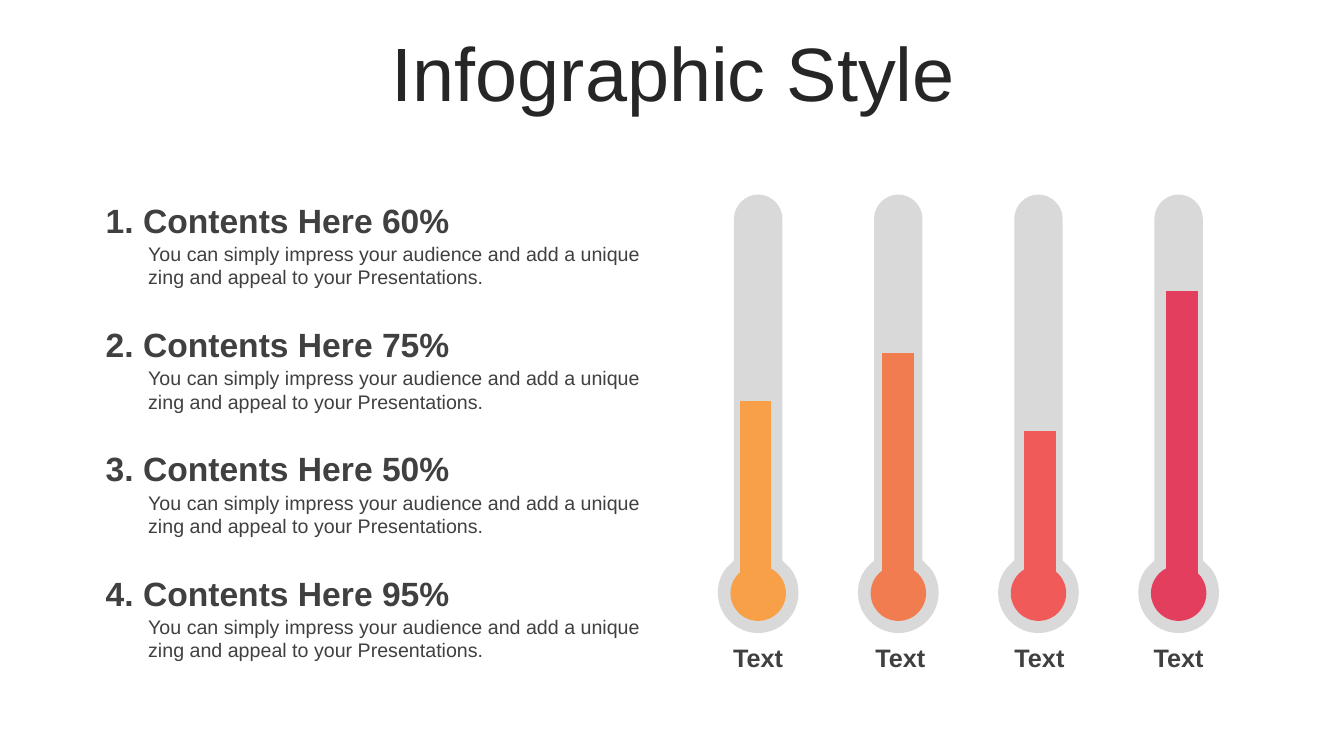
"""Build a slide with four thermometers beside four numbered statements."""
from lxml import etree
from pptx import Presentation
from pptx.chart.data import CategoryChartData
from pptx.dml.color import RGBColor
from pptx.enum.chart import XL_CHART_TYPE
from pptx.enum.shapes import MSO_SHAPE
from pptx.enum.text import MSO_ANCHOR, MSO_AUTO_SIZE, PP_ALIGN
from pptx.oxml.ns import qn
from pptx.util import Inches, Pt

COLUMNS = XL_CHART_TYPE.COLUMN_CLUSTERED
OVAL = MSO_SHAPE.OVAL
MIDDLE, TOP = MSO_ANCHOR.MIDDLE, MSO_ANCHOR.TOP
GROW, FIXED = MSO_AUTO_SIZE.SHAPE_TO_FIT_TEXT, MSO_AUTO_SIZE.NONE
LEFT, CENTER = PP_ALIGN.LEFT, PP_ALIGN.CENTER

THEME = {
    "font": "Arial",
    "glass": "D9D9D9",
    "chart": {"size": 10, "color": "000000"},
    "title": {"size": 54, "color": "262626", "bold": False},
    "heading": {"size": 24, "color": "404040", "bold": True},
    "body": {"size": 14, "color": "404040", "bold": False},
    "label": {"size": 18, "color": "404040", "bold": True},
    "levels": ["F8A047", "F07C4F", "F05A59", "E43E5F"],
}


def paint(shape, color):
    """Give a shape a flat fill with no line or shadow."""
    shape.shadow.inherit = False
    shape.fill.solid()
    shape.fill.fore_color.rgb = RGBColor.from_string(color)
    shape.line.fill.background()


def write(page, text, place, style, align=LEFT, anchor=TOP, fit=GROW, inset=0.1):
    """Add a wrapped text box and return its paragraph."""
    frame = page.shapes.add_textbox(*map(Inches, place)).text_frame
    settings = {
        "word_wrap": True,
        "auto_size": fit,
        "vertical_anchor": anchor,
        "margin_left": Inches(inset),
        "margin_right": Inches(inset),
    }
    for name, value in settings.items():
        setattr(frame, name, value)
    para = frame.paragraphs[0]
    para.alignment = align
    span = para.add_run()
    span.text = text
    look = {"name": THEME["font"], "size": Pt(style["size"]), "bold": style["bold"]}
    for name, value in look.items():
        setattr(span.font, name, value)
    span.font.color.rgb = RGBColor.from_string(style["color"])
    return para


deck = Presentation()
deck.slide_width, deck.slide_height = Inches(13.33), Inches(7.5)
page = deck.slides.add_slide(deck.slide_layouts[6])

title = write(page, "Infographic Style", (0.35, 0.37, 12.66, 0.79), THEME["title"],
              CENTER, MIDDLE, FIXED)
title.line_spacing = 0.9

FIRST_CENTER, PITCH = 7.52, 1.39
centers = [FIRST_CENTER + PITCH * index for index in range(4)]
right_half = [
    (0, 1.93), (0.13, 1.93), (0.24, 2.04), (0.24, 2.17),
    (0.24, 5.56), (0.28, 5.6),
    (0.36, 5.67), (0.4, 5.77), (0.4, 5.88),
    (0.4, 6.1), (0.22, 6.28), (0, 6.28),
]
outline = right_half + [(-x, y) for x, y in right_half[-2::-1]]
half_steps = ["curve", "line", "line", "curve", "curve"]
steps = half_steps + half_steps[::-1]

for center in centers:
    points = [(Inches(center + x), Inches(y)) for x, y in outline]
    builder = page.shapes.build_freeform(*points[0])
    builder.add_line_segments(points[1:], close=True)
    glass = builder.convert_to_shape()
    paint(glass, THEME["glass"])
    segments = iter(list(glass._element.iter(qn("a:lnTo"))))
    for step in steps:
        segment = next(segments)
        if step == "curve":
            segment.tag = qn("a:cubicBezTo")
            for control in (next(segments), next(segments)):
                segment.append(control[0])
                control.getparent().remove(control)

BULB_SIZE = 0.55
for center, color in zip(centers, THEME["levels"]):
    bulb = page.shapes.add_shape(OVAL, Inches(center - BULB_SIZE / 2), Inches(5.61),
                                 Inches(BULB_SIZE), Inches(BULB_SIZE))
    paint(bulb, color)

BODY = ("You can simply impress your audience and add a unique "
        "zing and appeal to your Presentations.")
ROW_PITCH = 3.7 / 3
for row, percent in enumerate((60, 75, 50, 95)):
    top = 1.93 + ROW_PITCH * row
    write(page, BODY, (1.39, top + 0.42, 5.27, 0.57), THEME["body"], inset=0.08)
    write(page, f"{row + 1}. Contents Here {percent}%", (0.95, top, 5.72, 0.5),
          THEME["heading"])

for left in (7.17, 8.58, 9.96, 11.34):
    write(page, "Text", (left, 6.32, 0.7, 0.4), THEME["label"], CENTER)

data = CategoryChartData()
data.categories = ["1", "2", "3", "4"]
data.add_series("Series 1", (63, 79, 53, 100))
chart = page.shapes.add_chart(COLUMNS, Inches(6.67), Inches(2.66), Inches(5.88),
                              Inches(3.22), data).chart
chart.has_legend = False
chart.has_title = False
chart.font.name = THEME["font"]
chart.font.size = Pt(THEME["chart"]["size"])
chart.font.color.rgb = RGBColor.from_string(THEME["chart"]["color"])
chart.category_axis.visible = False
scale = {"visible": False, "has_major_gridlines": False,
         "minimum_scale": 0, "maximum_scale": 100}
for name, value in scale.items():
    setattr(chart.value_axis, name, value)

plot = chart.plots[0]
plot.gap_width = 350
plot.vary_by_categories = False
series = plot.series[0]
series.format.fill.solid()
series.format.fill.fore_color.rgb = RGBColor.from_string(THEME["levels"][0])
for index, color in enumerate(THEME["levels"][1:], 1):
    fill = series.points[index].format.fill
    fill.solid()
    fill.fore_color.rgb = RGBColor.from_string(color)

plot_area = chart._chartSpace.chart.plotArea
for old in plot_area.findall(qn("c:layout")):
    plot_area.remove(old)
layout = etree.Element(qn("c:layout"))
plot_area.insert(0, layout)
manual = etree.SubElement(layout, qn("c:manualLayout"))
frame_parts = {"layoutTarget": "inner", "xMode": "edge", "yMode": "edge",
               "x": 0.02, "y": 0.07, "w": 0.96, "h": 0.92}
for name, value in frame_parts.items():
    etree.SubElement(manual, qn(f"c:{name}")).set("val", str(value))

deck.save("out.pptx")
